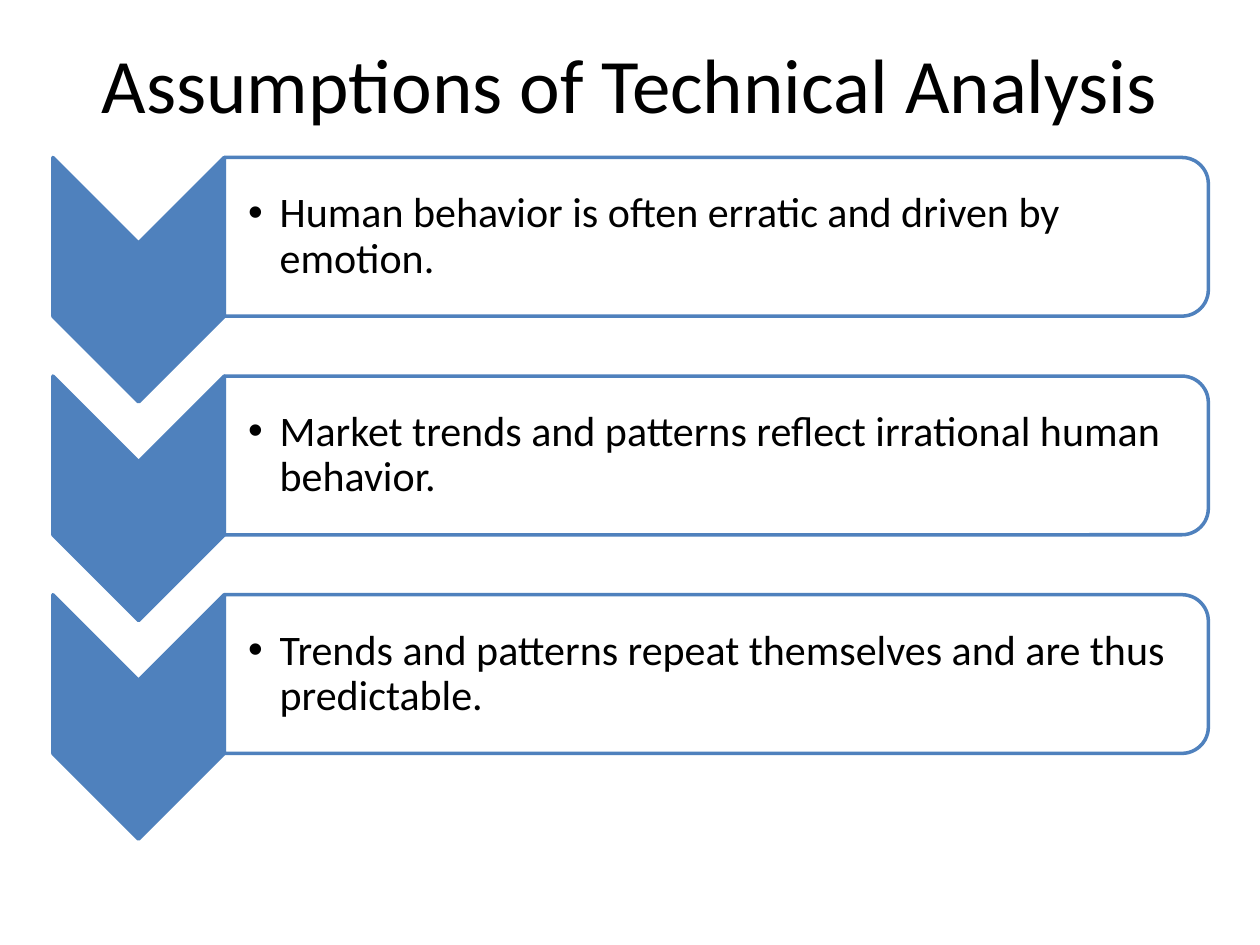
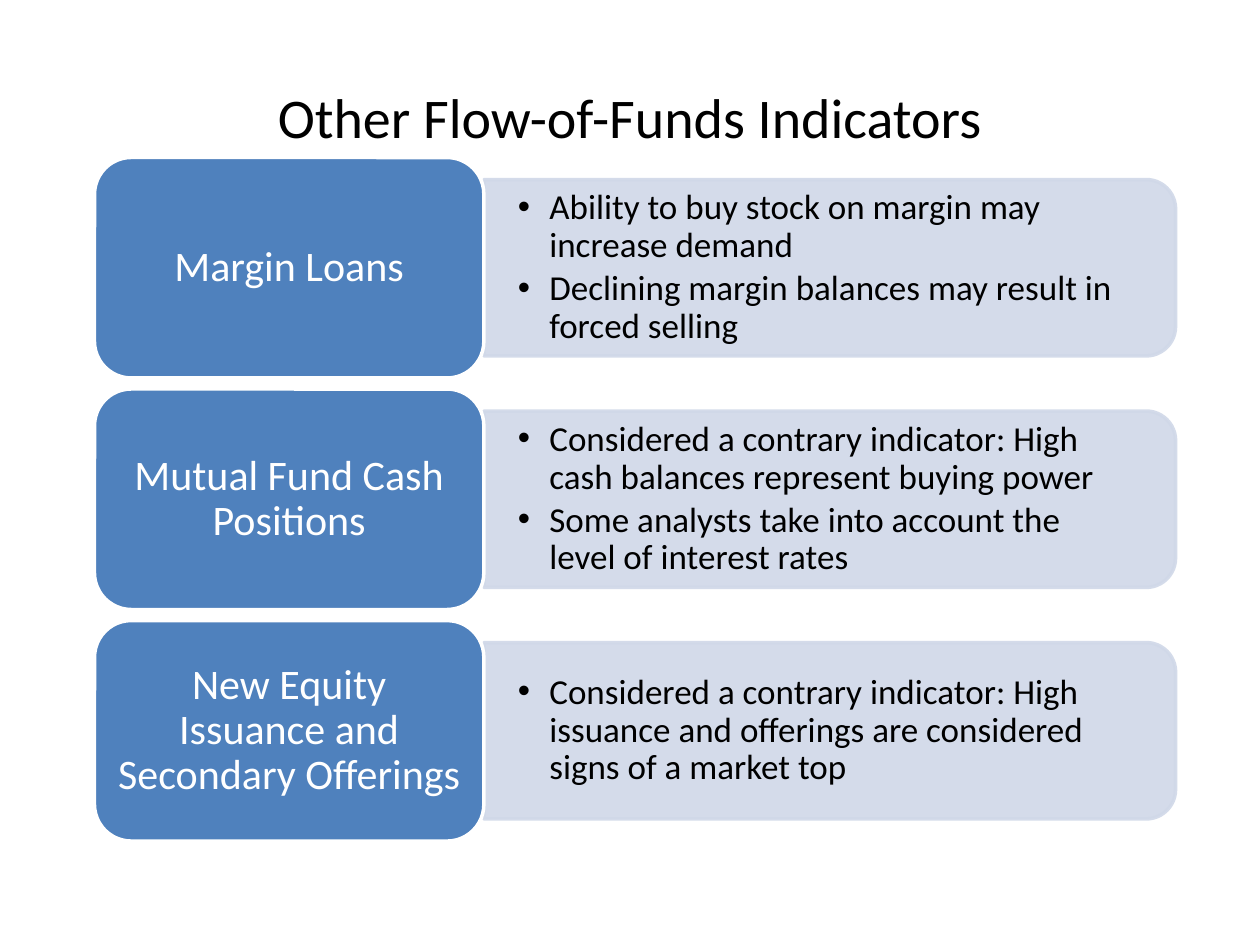
"""Build two slides on technical analysis: its assumptions and flow-of-funds indicators."""
from dataclasses import dataclass

from lxml.etree import SubElement
from pptx import Presentation
from pptx.dml.color import RGBColor
from pptx.enum.shapes import MSO_SHAPE as Shape
from pptx.enum.text import MSO_ANCHOR as Anchor, PP_ALIGN as Align
from pptx.oxml.ns import qn
from pptx.util import Inches, Pt


@dataclass(frozen=True)
class Theme:
    font: str = "Calibri"
    black: str = "000000"
    white: str = "FFFFFF"
    blue: str = "4F81BD"
    pale: str = "D0D8E8"
    title: int = 44
    small_title: int = 32
    large: int = 24
    body: int = 20
    outline: int = 2
    spacing: float = 0.9
    indent: float = 0.25
    opacity: str = "90000"


def write(frame, *paragraphs, size, color=Theme.black, align=Align.LEFT,
          bullet=False, spacing=None, after=0, insets=None):
    """Fill a text frame with evenly formatted paragraphs."""
    frame.word_wrap = True
    frame.vertical_anchor = Anchor.MIDDLE
    if insets:
        side, right, edge = insets
        frame.margin_left, frame.margin_right = Inches(side), Inches(right)
        frame.margin_top = frame.margin_bottom = Inches(edge)
    for number, text in enumerate(paragraphs):
        paragraph = frame.add_paragraph() if number else frame.paragraphs[0]
        paragraph.alignment = align
        if spacing:
            paragraph.line_spacing = spacing
            paragraph.space_after = Pt(size * after)
        if bullet:
            properties = paragraph._p.get_or_add_pPr()
            properties.set("marL", str(Inches(theme.indent)))
            properties.set("indent", str(-Inches(theme.indent)))
            SubElement(properties, qn("a:buFont"), typeface="Arial")
            SubElement(properties, qn("a:buChar"), char="•")
        run = paragraph.add_run()
        run.text = text
        run.font.name, run.font.size = theme.font, Pt(size)
        run.font.color.rgb = RGBColor.from_string(color)


def block(slide, kind, left, top, width, height, fill, line, turned=False, faded=False):
    """Draw a shape over the given area, optionally turned a quarter clockwise."""
    if turned:
        left, top = left + (width - height) / 2, top + (height - width) / 2
        width, height = height, width
    shape = slide.shapes.add_shape(kind, *map(Inches, (left, top, width, height)))
    shape.rotation = 90 if turned else 0
    shape.shadow.inherit = False
    shape.fill.solid()
    shape.fill.fore_color.rgb = RGBColor.from_string(fill)
    shape.line.color.rgb = RGBColor.from_string(line)
    shape.line.width = Pt(theme.outline)
    if faded:
        for tint in shape._element.spPr.iter(qn("a:srgbClr")):
            if tint.get("val") == fill:
                SubElement(tint, qn("a:alpha"), val=theme.opacity)
    return shape


theme = Theme()
deck = Presentation()
deck.slide_width, deck.slide_height = Inches(10), Inches(7.5)
title_only = deck.slide_layouts[5]

headings = [
    ("Assumptions of Technical Analysis", theme.title, (0.42, 0.03, 9.16, 1.25)),
    ("Other Flow-of-Funds Indicators", theme.small_title, (0.5, 0.3, 9, 1.25)),
]
slides = []
for heading, size, area in headings:
    slide = deck.slides.add_slide(title_only)
    title = slide.shapes.title
    title.left, title.top, title.width, title.height = map(Inches, area)
    write(title.text_frame, heading, size=size, align=Align.CENTER)
    slides.append(slide)
assumptions_slide, indicators_slide = slides

assumptions = [
    "Human behavior is often erratic and driven by emotion.",
    "Market trends and patterns reflect irrational human behavior.",
    "Trends and patterns repeat themselves and are thus predictable.",
]
first_row, arrow_left, arrow_width, arrow_height = 1.25, 0.42, 1.36, 1.94
statement_left, statement_width, statement_height = arrow_left + arrow_width, 7.81, 1.26
statement_pitch = 3.47 / 2
for row, assumption in enumerate(assumptions):
    top = first_row + row * statement_pitch
    block(assumptions_slide, Shape.CHEVRON, arrow_left, top, arrow_width, arrow_height,
          theme.blue, theme.blue, turned=True)
    block(assumptions_slide, Shape.ROUND_2_SAME_RECTANGLE, statement_left, top,
          statement_width, statement_height, theme.white, theme.blue, turned=True, faded=True)
    statement = assumptions_slide.shapes.add_textbox(
        *map(Inches, (statement_left, top + 0.06, statement_width - 0.07, statement_height - 0.12)))
    write(statement.text_frame, assumption, size=theme.large, bullet=True,
          spacing=theme.spacing, after=0.15, insets=(0.19, 0.02, 0.02))

indicators = {
    "Margin Loans": [
        "Ability to buy stock on margin may increase demand",
        "Declining margin balances may result in forced selling",
    ],
    "Mutual Fund Cash Positions": [
        "Considered a contrary indicator: High cash balances represent buying power",
        "Some analysts take into account the level of interest rates",
    ],
    "New Equity Issuance and Secondary Offerings": [
        "Considered a contrary indicator: High issuance and offerings are considered"
        " signs of a market top",
    ],
}
indicator_left, indicator_width, indicator_height = 0.75, 3.09, 1.75
detail_left, detail_width, detail_height = indicator_left + indicator_width, 5.49, 1.4
detail_drop = (indicator_height - detail_height) / 2
indicator_pitch = indicator_height * 1.05
for row, (indicator, details) in enumerate(indicators.items()):
    top = first_row + row * indicator_pitch
    detail_top = top + detail_drop
    block(indicators_slide, Shape.ROUND_2_SAME_RECTANGLE, detail_left, detail_top,
          detail_width, detail_height, theme.pale, theme.pale, turned=True, faded=True)
    detail = indicators_slide.shapes.add_textbox(
        *map(Inches, (detail_left, detail_top + 0.07, detail_width - 0.06, detail_height - 0.14)))
    write(detail.text_frame, *details, size=theme.body, bullet=True,
          spacing=theme.spacing, after=0.15, insets=(0.27, 0.27, 0.14))
    label = block(indicators_slide, Shape.ROUNDED_RECTANGLE, indicator_left, top,
                  indicator_width, indicator_height, theme.blue, theme.white)
    write(label.text_frame, indicator, size=theme.large, color=theme.white,
          align=Align.CENTER, spacing=theme.spacing, after=0.35)

deck.save("out.pptx")
